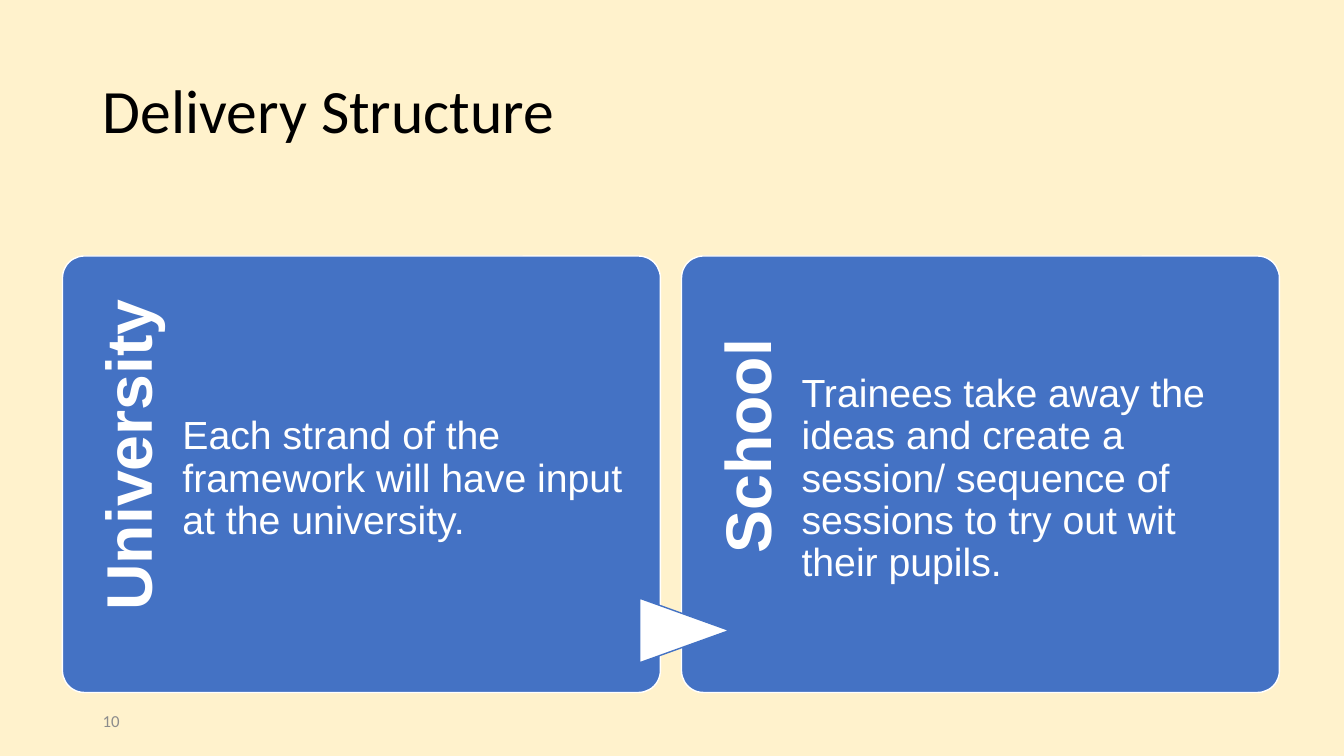
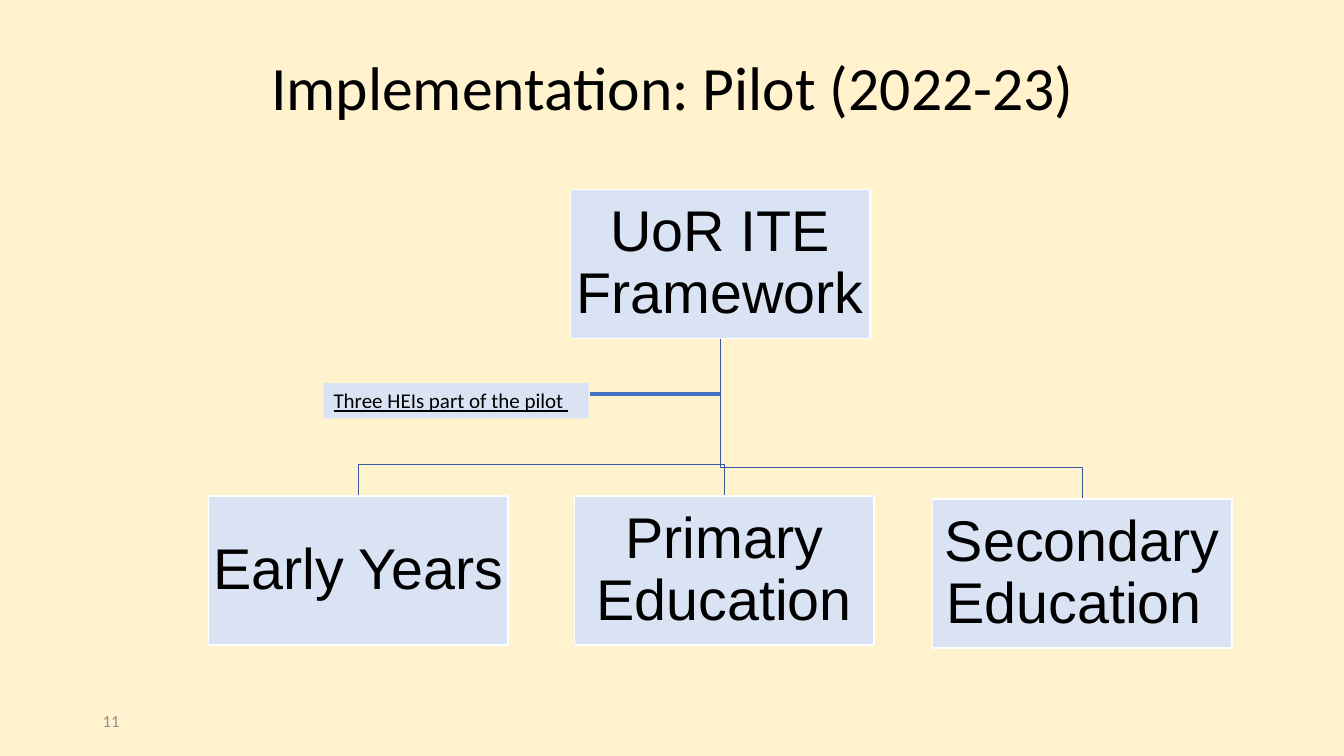
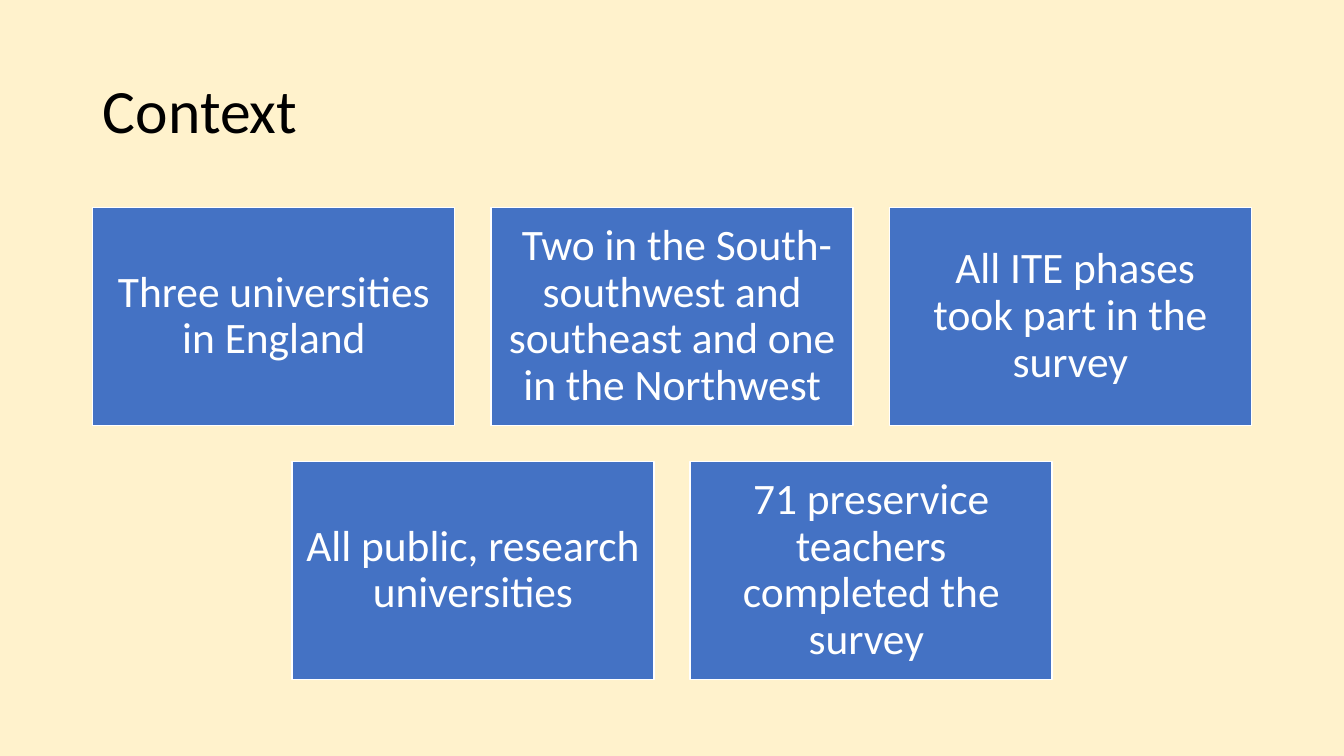
from dataclasses import dataclass

import lxml.etree
import pptx
import pptx.dml.color
import pptx.enum.shapes
import pptx.enum.text
import pptx.oxml.ns
import pptx.shapes.autoshape
import pptx.slide
import pptx.text.text
import pptx.util

Inches = pptx.util.Inches
KIND = pptx.enum.shapes.MSO_SHAPE
ALIGN = pptx.enum.text.PP_ALIGN
ANCHOR = pptx.enum.text.MSO_ANCHOR
FIT = pptx.enum.text.MSO_AUTO_SIZE

# Shared look
WIDTH, HEIGHT = 13.33, 7.5
CREAM, BLUE, PALE, NAVY = "FFF2CC", "4472C4", "DAE3F3", "365B9D"
WHITE, BLACK, GREY = "FFFFFF", "000000", "8C8C8C"
SANS, HEAD = "Arial", "Calibri"


@dataclass
class Box:
    left: float
    top: float
    width: float
    height: float
    text: str = ""

    def place(self) -> tuple:
        return tuple(Inches(n) for n in (self.left, self.top, self.width, self.height))


@dataclass
class Card:
    left: float
    label: str
    body: str


def tint(code: str) -> pptx.dml.color.RGBColor:
    return pptx.dml.color.RGBColor.from_string(code)


def write(frame: pptx.text.text.TextFrame, text: str, *, size: float, font: str = HEAD,
          color: str = BLACK, bold: bool = False, line: bool = False,
          align: ALIGN = ALIGN.LEFT, anchor: ANCHOR = ANCHOR.MIDDLE, lead: float = 0.9,
          pads: tuple = (0.1, 0.05, 0.1, 0.05), fit: FIT = FIT.NONE) -> None:
    """Fill a text frame with one formatted paragraph."""
    frame.word_wrap = True
    frame.auto_size = fit
    frame.vertical_anchor = anchor
    (frame.margin_left, frame.margin_top,
     frame.margin_right, frame.margin_bottom) = (Inches(pad) for pad in pads)
    para = frame.paragraphs[0]
    para.alignment, para.line_spacing = align, lead
    run = para.add_run()
    run.text = text
    run.font.name, run.font.size = font, pptx.util.Pt(size)
    run.font.bold, run.font.underline = bold, line
    run.font.color.rgb = tint(color)


def label(slide: pptx.slide.Slide, box: Box, turn: float = 0, **style) -> None:
    """Add a text box."""
    item = slide.shapes.add_textbox(*box.place())
    item.rotation = turn
    write(item.text_frame, box.text, **style)


def block(slide: pptx.slide.Slide, box: Box, fill: str, edge: str = "",
          kind: KIND = KIND.RECTANGLE, **style) -> pptx.shapes.autoshape.Shape:
    """Add a filled shape, with text when the box has any."""
    shape = slide.shapes.add_shape(kind, *box.place())
    shape.shadow.inherit = False
    shape.fill.solid()
    shape.fill.fore_color.rgb = tint(fill)
    if edge:
        shape.line.color.rgb = tint(edge)
        shape.line.width = pptx.util.Pt(1)
    else:
        shape.line.fill.background()
    if box.text:
        write(shape.text_frame, box.text, **style)
    return shape


def trace(slide: pptx.slide.Slide, points: list[tuple[float, float]]) -> None:
    """Draw an open bent line through the points."""
    spots = [(Inches(x), Inches(y)) for x, y in points]
    pen = slide.shapes.build_freeform(*spots[0])
    pen.add_line_segments(spots[1:], close=False)
    shape = pen.convert_to_shape()
    shape.shadow.inherit = False
    shape.fill.background()
    shape.line.color.rgb = tint(NAVY)
    shape.line.width = pptx.util.Pt(1)


def start(deck, title: str, box: Box = Box(0.92, 0.4, 11.5, 1.45),
          align: ALIGN = ALIGN.LEFT, page: str = "") -> pptx.slide.Slide:
    """Add a slide with its title and page number."""
    slide = deck.slides.add_slide(deck.slide_layouts[5])
    head = slide.shapes.title
    head.left, head.top, head.width, head.height = box.place()
    write(head.text_frame, title, size=44, align=align)
    if page:
        label(slide, Box(0.92, 6.95, 3, 0.4, page), size=12, color=GREY, lead=1)
    return slide


def structure(deck) -> None:
    slide = start(deck, "Delivery Structure", page="10")
    top, height = 2.54, 4.33
    cards = [
        Card(0.62, "University ",
             "Each strand of the framework will have input at the university. "),
        Card(6.76, "School",
             "Trainees take away the ideas and create a session/ sequence of "
             "sessions to try out wit their pupils.  "),
    ]
    for card in cards:
        panel = block(slide, Box(card.left, top, 5.93, height), BLUE, WHITE,
                      KIND.ROUNDED_RECTANGLE)
        panel.adjustments[0] = 0.05
        label(slide, Box(card.left - 1.18, 3.72, 3.55, 1.19, card.label), 270, size=46,
              font=SANS, color=WHITE, bold=True, align=ALIGN.CENTER,
              anchor=ANCHOR.MIDDLE, pads=(0, 0.17, 0.22, 0))
        label(slide, Box(card.left + 1.19, top, 4.42, height, card.body), size=28,
              font=SANS, color=WHITE, pads=(0, 0.1, 0, 0))
    # Arrow between the cards
    arrow = block(slide, Box(6.47, 5.81, 0.64, 0.89), WHITE, BLUE, KIND.FLOWCHART_EXTRACT)
    arrow.rotation = 90


def pilot(deck) -> None:
    slide = start(deck, "Implementation: Pilot (2022-23)", Box(0.64, 0.44, 12.07, 0.91),
                  ALIGN.CENTER, "11")
    wide, high = 2.97, 1.48
    root = Box(5.66, 1.88, wide, high, "UoR ITE Framework")
    leaves = [
        Box(9.25, 4.95, wide, high, "Secondary Education "),
        Box(5.7, 4.92, wide, high, "Primary Education"),
        Box(2.07, 4.92, wide, high, "Early Years"),
    ]
    # Branches
    stem, base = root.left + wide / 2, root.top + high
    for leaf in leaves:
        mid, bend = leaf.left + wide / 2, leaf.top - 0.31
        trace(slide, [(stem, base), (stem, bend), (mid, bend), (mid, leaf.top)])
    for node in [root, *leaves]:
        block(slide, node, PALE, WHITE, size=41, font=SANS, align=ALIGN.CENTER,
              pads=(0.03,) * 4)
    # Side note and its link
    note = Box(3.21, 3.8, 2.63, 0.35, "Three HEIs part of the pilot ")
    block(slide, note, PALE, size=15, line=True, lead=1, anchor=ANCHOR.TOP,
          fit=FIT.SHAPE_TO_FIT_TEXT)
    link = slide.shapes.add_connector(
        pptx.enum.shapes.MSO_CONNECTOR.STRAIGHT,
        Inches(5.85), Inches(3.91), Inches(stem), Inches(3.91))
    link.line.color.rgb = tint(BLUE)
    link.line.width = pptx.util.Pt(3)
    lxml.etree.SubElement(link.element.spPr, pptx.oxml.ns.qn("a:effectLst"))


def context(deck) -> None:
    slide = start(deck, "Context ")
    wide, high, gap, top = 3.59, 2.16, 0.36, 2.06
    rows = [
        ["Three universities in England",
         " Two in the South- southwest and southeast and one in the Northwest",
         " All ITE phases took part in the survey"],
        ["All public, research universities",
         "71 preservice teachers completed the survey "],
    ]
    # Each row is centred on the slide
    for i, row in enumerate(rows):
        left = (WIDTH - len(row) * (wide + gap) + gap) / 2
        for j, text in enumerate(row):
            tile = Box(left + j * (wide + gap), top + i * (high + gap), wide, high, text)
            block(slide, tile, BLUE, WHITE, size=31, color=WHITE, align=ALIGN.CENTER,
                  pads=(0.13,) * 4)


def main() -> None:
    deck = pptx.Presentation()
    deck.slide_width, deck.slide_height = Inches(WIDTH), Inches(HEIGHT)
    ground = deck.slide_master.background.fill
    ground.solid()
    ground.fore_color.rgb = tint(CREAM)
    structure(deck)
    pilot(deck)
    context(deck)
    deck.save("out.pptx")


if __name__ == "__main__":
    main()
